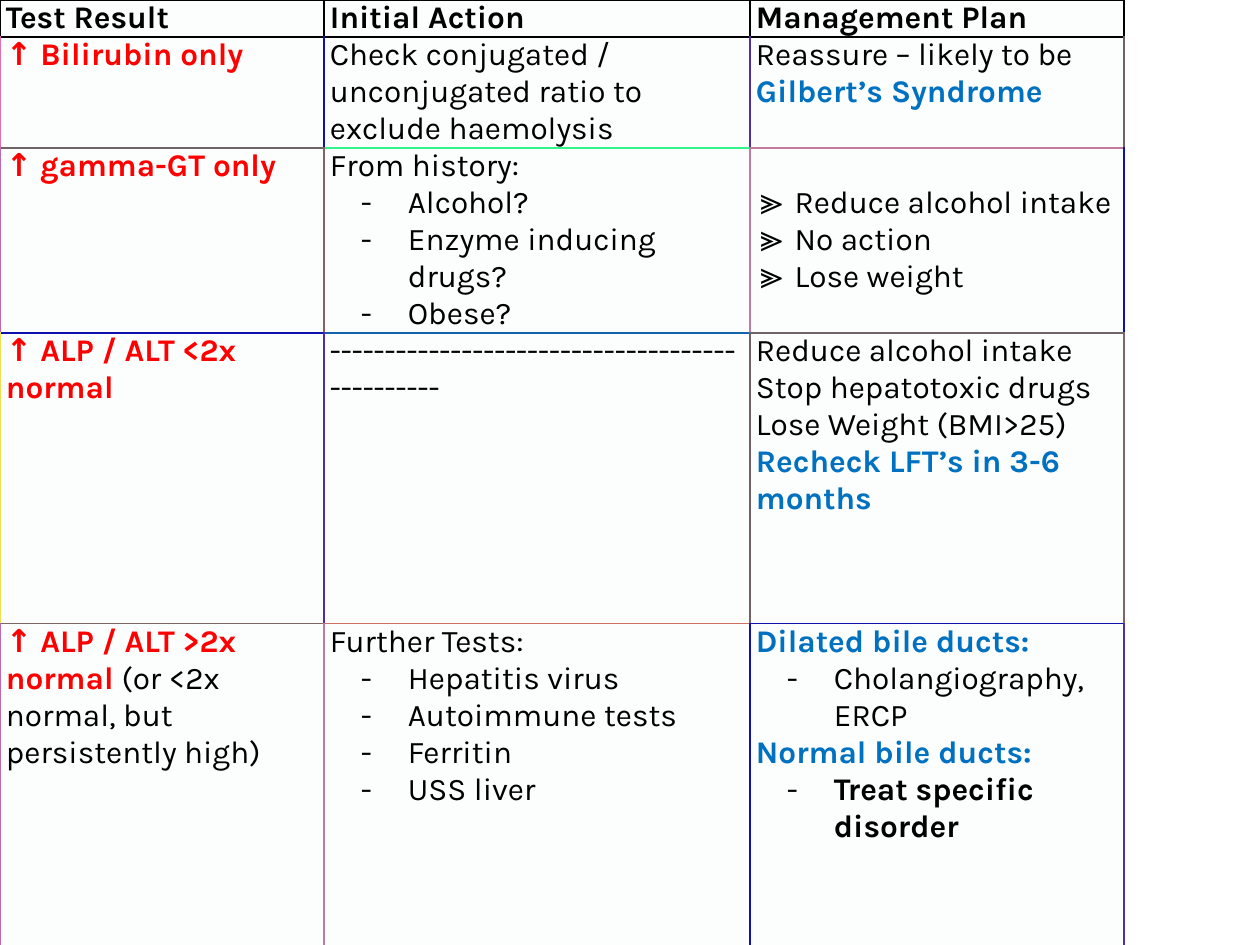
from lxml.etree import SubElement as add_element
from pptx import Presentation
from pptx.dml.color import RGBColor
from pptx.enum.text import MSO_ANCHOR, PP_ALIGN
from pptx.oxml.ns import qn
from pptx.util import Emu, Pt

BLACK = RGBColor(0x00, 0x00, 0x00)
RED = RGBColor(0xFF, 0x00, 0x00)
BLUE = RGBColor(0x00, 0x70, 0xC0)
PAPER = RGBColor(0xFC, 0xFE, 0xFE)
NAVY = RGBColor(0x10, 0x11, 0xAE)
OCEAN = RGBColor(0x10, 0x63, 0xAB)
VIOLET = RGBColor(0x50, 0x2C, 0xA9)
MINT = RGBColor(0x30, 0xF6, 0x8C)
GREY = RGBColor(0x70, 0x63, 0x65)
BROWN = RGBColor(0x80, 0x65, 0x65)
MAUVE = RGBColor(0xC0, 0x7A, 0x9F)
ORCHID = RGBColor(0xC0, 0x68, 0xAD)
PINK = RGBColor(0xE0, 0x6D, 0xAD)
YELLOW = RGBColor(0xF0, 0xDF, 0x4E)
CORAL = RGBColor(0xD0, 0x6E, 0x65)
MAGENTA = RGBColor(0xD0, 0x1D, 0xC1)

PX = 914400 / 126
LINE = 37  # height of one text line

COLUMNS = [324, 426, 374]
ROWS = [LINE, 110, 181, 291, 328]

# Rules left to right in each row, and top to bottom between the rows
VERTICALS = [
    [BLACK] * 4,
    [PINK, NAVY, VIOLET, GREY],
    [ORCHID, BROWN, MAUVE, NAVY],
    [YELLOW, VIOLET, GREY, BROWN],
    [ORCHID, MAUVE, NAVY, VIOLET],
]
HORIZONTALS = [
    [BLACK] * 3,
    [BLACK] * 3,
    [GREY, MINT, MAUVE],
    [NAVY, OCEAN, GREY],
    [BROWN, CORAL, NAVY],
    [VIOLET, MAGENTA, BROWN],
]


def px(length):
    return Emu(round(length * PX))


def span(text, font="Karla", color=BLACK, bold=False):
    return {"text": text, "font": font, "color": color, "bold": bold}


def line(*spans, dash=False):
    return {"spans": spans, "dash": dash}


def plain(text):
    return line(span(text))


def strong(text, color):
    return line(span(text, color=color, bold=True))


def dashed(text, bold=False):
    return line(span(text, bold=bold), dash=True)


def arrowed(text):
    return line(span("≫", font="Cambria"), span(" " + text))


CONTENT = [
    [[strong(title, BLACK)]
     for title in ("Test Result", "Initial Action", "Management Plan")],
    [
        [strong("↑ Bilirubin only", RED)],
        [plain("Check conjugated / unconjugated ratio to exclude haemolysis")],
        [line(span("Reassure – likely to be "),
              span("Gilbert’s Syndrome", color=BLUE, bold=True))],
    ],
    [
        [strong("↑ gamma-GT only", RED)],
        [plain("From history:"), dashed("Alcohol?"),
         dashed("Enzyme inducing drugs?"), dashed("Obese?")],
        [arrowed("Reduce alcohol intake"), arrowed("No action"),
         arrowed("Lose weight")],
    ],
    [
        [strong("↑ ALP / ALT <2x normal", RED)],
        [plain("-" * 47)],
        [plain("Reduce alcohol intake"), plain("Stop hepatotoxic drugs"),
         plain("Lose Weight (BMI>25)"),
         strong("Recheck LFT’s in 3-6 months", BLUE)],
    ],
    [
        [line(span("↑ ALP / ALT >2x normal ", color=RED, bold=True),
              span("(or <2x normal, but persistently high)"))],
        [plain("Further Tests:"), dashed("Hepatitis virus"),
         dashed("Autoimmune tests"), dashed("Ferritin"), dashed("USS liver")],
        [strong("Dilated bile ducts:", BLUE), dashed("Cholangiography, ERCP"),
         strong("Normal bile ducts:", BLUE),
         dashed("Treat specific disorder", bold=True)],
    ],
]


class SlideBuilder:
    text_size = Pt(18)
    rule_width = Pt(1)
    side_margin = px(6)
    dash_left, dash_hang = px(78), px(47)

    def __init__(self, page):
        self.page = page

    def table(self, left, top, columns, rows):
        frame = self.page.shapes.add_table(
            len(rows), len(columns), px(left), px(top),
            px(sum(columns)), px(sum(rows)))
        table = frame.table
        table.first_row = table.horz_banding = False
        for column, width in zip(table.columns, columns):
            column.width = px(width)
        for row, height in zip(table.rows, rows):
            row.height = px(height)
        return table

    def borders(self, cell, left, right, top, bottom):
        properties = cell._tc.get_or_add_tcPr()
        for side, color in zip("LRTB", (left, right, top, bottom)):
            rule = add_element(properties, qn(f"a:ln{side}"),
                               w=str(self.rule_width))
            fill = add_element(rule, qn("a:solidFill"))
            add_element(fill, qn("a:srgbClr"), val=str(color))

    def cell(self, cell, lines, top_margin=0):
        cell.fill.solid()
        cell.fill.fore_color.rgb = PAPER
        cell.margin_left = cell.margin_right = self.side_margin
        cell.margin_top, cell.margin_bottom = px(top_margin), 0
        cell.vertical_anchor = MSO_ANCHOR.TOP
        frame = cell.text_frame
        for index, item in enumerate(lines):
            para = frame.add_paragraph() if index else frame.paragraphs[0]
            self.para(para, **item)

    def para(self, para, spans, dash):
        para.alignment = PP_ALIGN.LEFT
        if dash:
            properties = para._p.get_or_add_pPr()
            properties.set("marL", str(self.dash_left))
            properties.set("indent", str(-self.dash_hang))
            add_element(properties, qn("a:buFont"), typeface="Karla")
            add_element(properties, qn("a:buChar"), char="-")
        for item in spans:
            run = para.add_run()
            run.text = item["text"]
            run.font.name = item["font"]
            run.font.size = self.text_size
            run.font.bold = item["bold"]
            run.font.color.rgb = item["color"]


def main():
    deck = Presentation()
    deck.slide_width, deck.slide_height = px(1260), px(945)
    builder = SlideBuilder(deck.slides.add_slide(deck.slide_layouts[6]))

    # Liver test table
    table = builder.table(0, 0, COLUMNS, ROWS)
    for r, row in enumerate(CONTENT):
        for c, lines in enumerate(row):
            cell = table.cell(r, c)
            builder.borders(cell, VERTICALS[r][c], VERTICALS[r][c + 1],
                            HORIZONTALS[r][c], HORIZONTALS[r + 1][c])
            # The gamma-GT plan starts level with the first history question
            builder.cell(cell, lines, LINE if (r, c) == (2, 2) else 0)

    deck.save("out.pptx")


if __name__ == "__main__":
    main()
